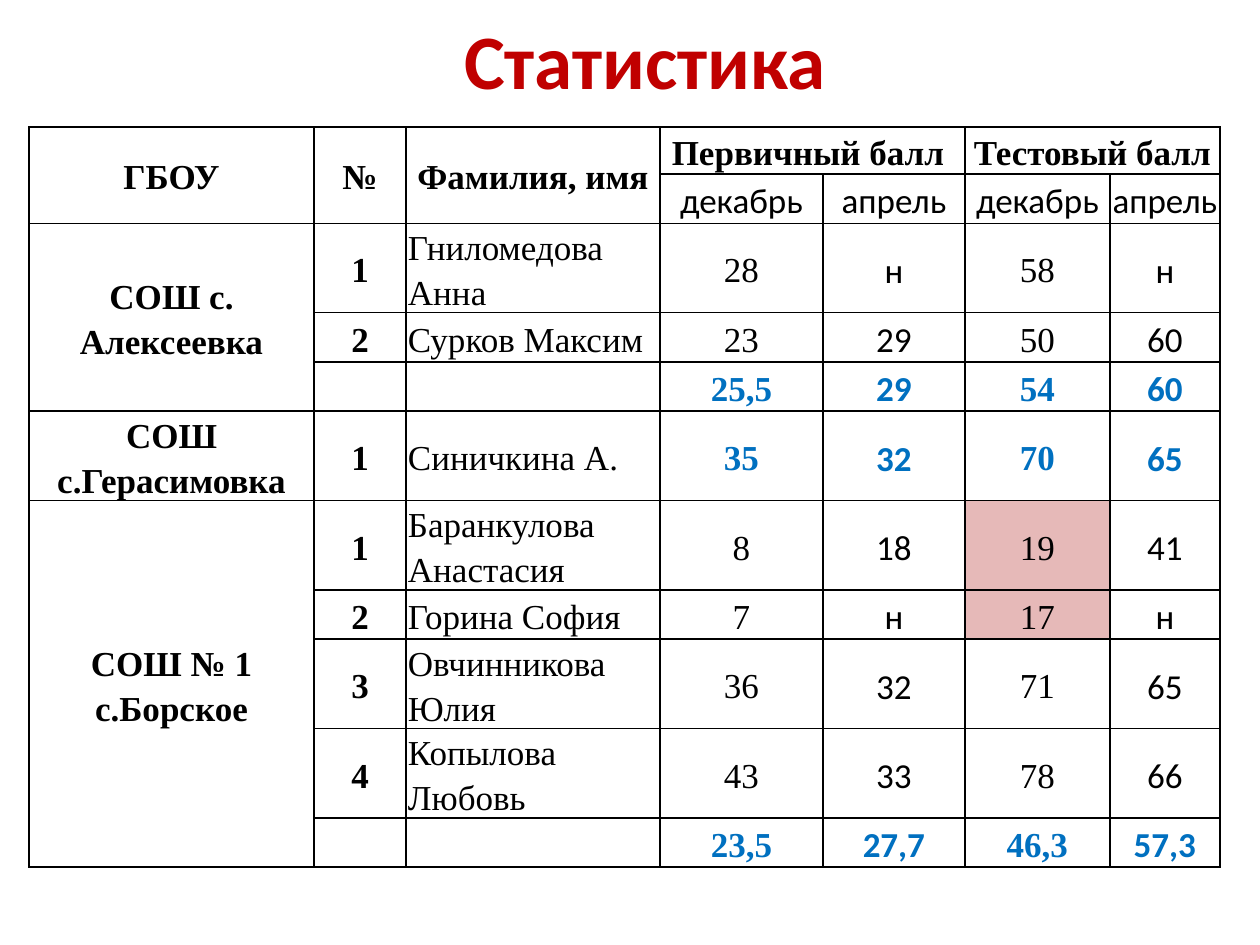
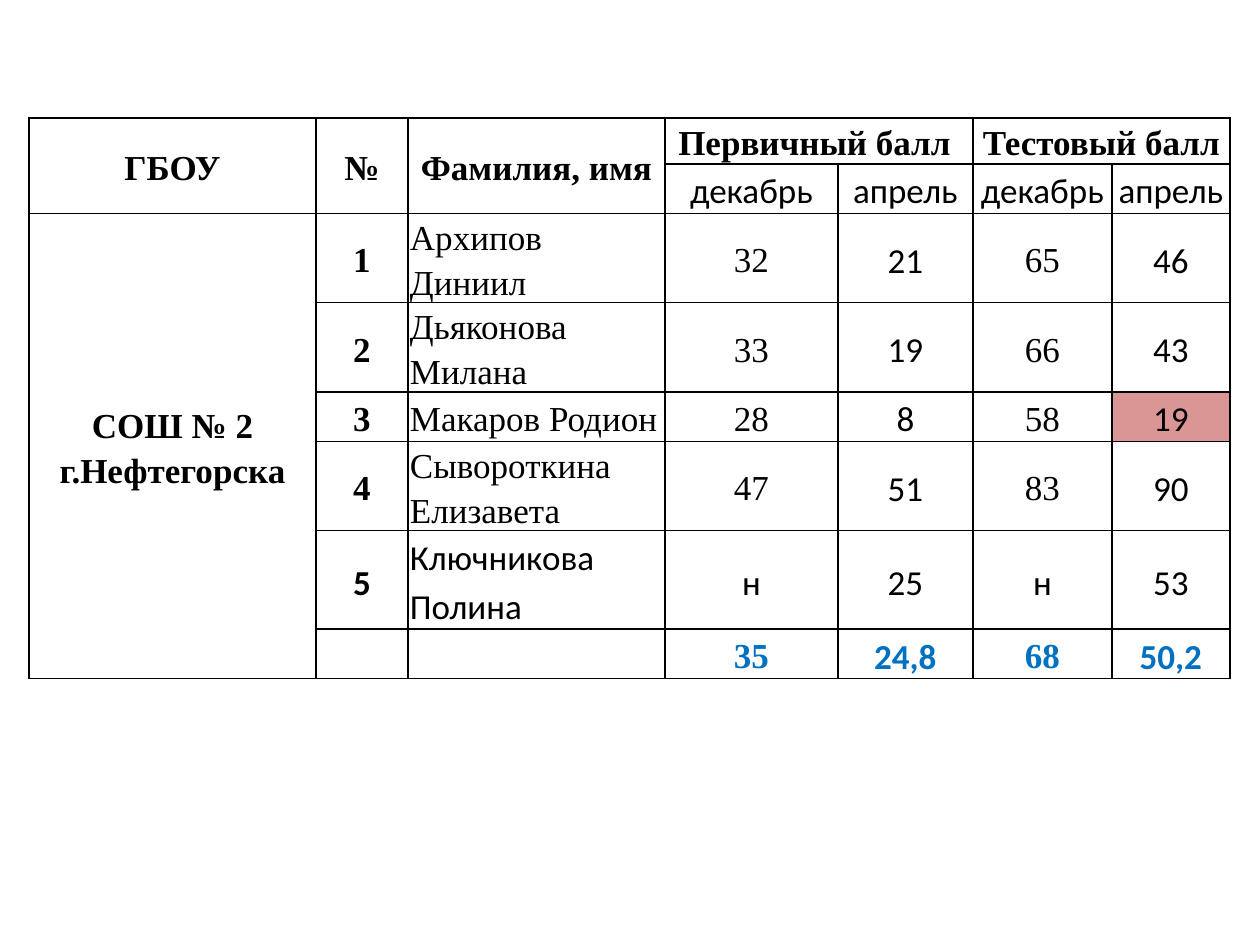
from lxml.etree import SubElement
from pptx import Presentation
from pptx.dml.color import RGBColor
from pptx.enum.text import MSO_ANCHOR, PP_ALIGN
from pptx.oxml.ns import qn
from pptx.util import Emu, Pt

PX = 914400 / 126
COLORS = {"title": "C00000", "text": "000000", "average": "0070C0",
          "border": "000000", "low_winter": "E6B9B8", "low_spring": "D99694"}
SERIF, SANS = "Times New Roman", "Calibri"
ABSENT = "н"
PASS_SCORE = 20
NAME_COLUMN, TEST_COLUMN = 2, 5
APRIL_COLUMNS = (4, 6)
SINGLE, DOUBLE, TALL = 49, 89, 98

HEADINGS = {0: "ГБОУ", 1: "№", 2: "Фамилия, имя",
            3: "Первичный балл ", 5: "Тестовый балл"}
MONTHS = ["декабрь", "апрель"] * 2

RURAL_SCHOOLS = {
    "СОШ с. Алексеевка": [
        ("1", "Гниломедова Анна", "28", "н", "58", "н"),
        ("2", "Сурков Максим", "23", "29", "50", "60"),
        ("", "", "25,5", "29", "54", "60"),
    ],
    "СОШ с.Герасимовка": [
        ("1", "Синичкина А.", "35", "32", "70", "65"),
    ],
    "СОШ № 1 с.Борское": [
        ("1", "Баранкулова Анастасия", "8", "18", "19", "41"),
        ("2", "Горина София", "7", "н", "17", "н"),
        ("3", "Овчинникова Юлия", "36", "32", "71", "65"),
        ("4", "Копылова Любовь", "43", "33", "78", "66"),
        ("", "", "23,5", "27,7", "46,3", "57,3"),
    ],
}
TOWN_SCHOOL = {
    "СОШ № 2 г.Нефтегорска": [
        ("1", "Архипов Диниил", "32", "21", "65", "46"),
        ("2", "Дьяконова Милана", "33", "19", "66", "43"),
        ("3", "Макаров Родион", "28", "8", "58", "19"),
        ("4", "Сывороткина Елизавета", "47", "51", "83", "90"),
        ("5", "Ключникова Полина", "н", "25", "н", "53"),
        ("", "", "35", "24,8", "68", "50,2"),
    ],
}


def px(length):
    return Emu(round(length * PX))


def set_font(font, color, **values):
    for name, value in values.items():
        setattr(font, name, value)
    font.color.rgb = RGBColor.from_string(COLORS[color])


def add_title(page, text, box):
    title = page.shapes.title
    for name, length in zip(("left", "top", "width", "height"), box):
        setattr(title, name, px(length))
    frame = title.text_frame
    frame.vertical_anchor = MSO_ANCHOR.MIDDLE
    para = frame.paragraphs[0]
    para.alignment = PP_ALIGN.CENTER
    span = para.add_run()
    span.text = text
    set_font(span.font, "title", name=SANS, size=Pt(44), bold=True)


def style_cell(cell):
    cell.fill.background()
    cell.vertical_anchor = MSO_ANCHOR.MIDDLE
    margins = {"margin_left": 2, "margin_right": 2, "margin_top": 0, "margin_bottom": 0}
    for name, length in margins.items():
        setattr(cell, name, px(length))
    properties = cell._tc.get_or_add_tcPr()
    for position, side in enumerate(("lnL", "lnR", "lnT", "lnB")):
        line = SubElement(properties, qn(f"a:{side}"), w="12700")
        fill = SubElement(line, qn("a:solidFill"))
        SubElement(fill, qn("a:srgbClr"), val=COLORS["border"])
        properties.insert(position, line)


def write(cell, text, font=SERIF, bold=False, color="text", align=PP_ALIGN.CENTER):
    if not text:
        return
    para = cell.text_frame.paragraphs[0]
    para.alignment = align
    para.line_spacing = 1.15
    span = para.add_run()
    span.text = text
    set_font(span.font, color, name=font, size=Pt(20), bold=bold)


def write_header(table):
    for column, text in HEADINGS.items():
        last = (1, column) if column <= NAME_COLUMN else (0, column + 1)
        table.cell(0, column).merge(table.cell(*last))
        write(table.cell(0, column), text, bold=True)
    for column, month in enumerate(MONTHS, NAME_COLUMN + 1):
        write(table.cell(1, column), month, font=SANS)


def write_student(table, row, student, is_average, low_color):
    april_only = student[2] == ABSENT
    for column, text in enumerate(student, 1):
        cell = table.cell(row, column)
        is_score = column > NAME_COLUMN
        sans = april_only or column in APRIL_COLUMNS or text == ABSENT
        averaged = is_score and is_average
        write(cell, text, font=SANS if sans else SERIF,
              bold=column == 1 or averaged,
              color="average" if averaged else "text",
              align=PP_ALIGN.LEFT if column == NAME_COLUMN else PP_ALIGN.CENTER)
        if column >= TEST_COLUMN and text.isdigit() and int(text) < PASS_SCORE:
            cell.fill.solid()
            cell.fill.fore_color.rgb = RGBColor.from_string(COLORS[low_color])


def add_score_table(page, origin, widths, heights, schools, low_color):
    left, top = origin
    box = (left, top, sum(widths), sum(heights))
    table = page.shapes.add_table(len(heights), len(widths), *map(px, box)).table
    table.first_row = table.horz_banding = False
    for column, width in zip(table.columns, widths):
        column.width = px(width)
    for row, height in zip(table.rows, heights):
        row.height = px(height)
    for cell in table.iter_cells():
        style_cell(cell)
    write_header(table)
    row = 2
    for school, students in schools.items():
        school_cell = table.cell(row, 0)
        if len(students) > 1:
            school_cell.merge(table.cell(row + len(students) - 1, 0))
        write(school_cell, school, bold=True)
        for student in students:
            is_average = not student[1] or len(students) == 1
            write_student(table, row, student, is_average, low_color)
            row += 1


def main():
    deck = Presentation()
    deck.slide_width, deck.slide_height = px(1260), px(945)

    page = deck.slides.add_slide(deck.slide_layouts[5])
    add_title(page, "Статистика", (78, 0, 1134, 118))
    add_score_table(page, (29, 127), [285, 92, 254, 163, 142, 145, 110],
                    [47, SINGLE, DOUBLE, SINGLE, SINGLE, DOUBLE,
                     DOUBLE, SINGLE, DOUBLE, DOUBLE, SINGLE],
                    RURAL_SCHOOLS, "low_winter")

    page = deck.slides.add_slide(deck.slide_layouts[6])
    add_score_table(page, (29, 118), [287, 92, 257, 173, 135, 139, 118],
                    [46, SINGLE, DOUBLE, DOUBLE, SINGLE, DOUBLE, TALL, SINGLE],
                    TOWN_SCHOOL, "low_spring")

    deck.save("out.pptx")


if __name__ == "__main__":
    main()
